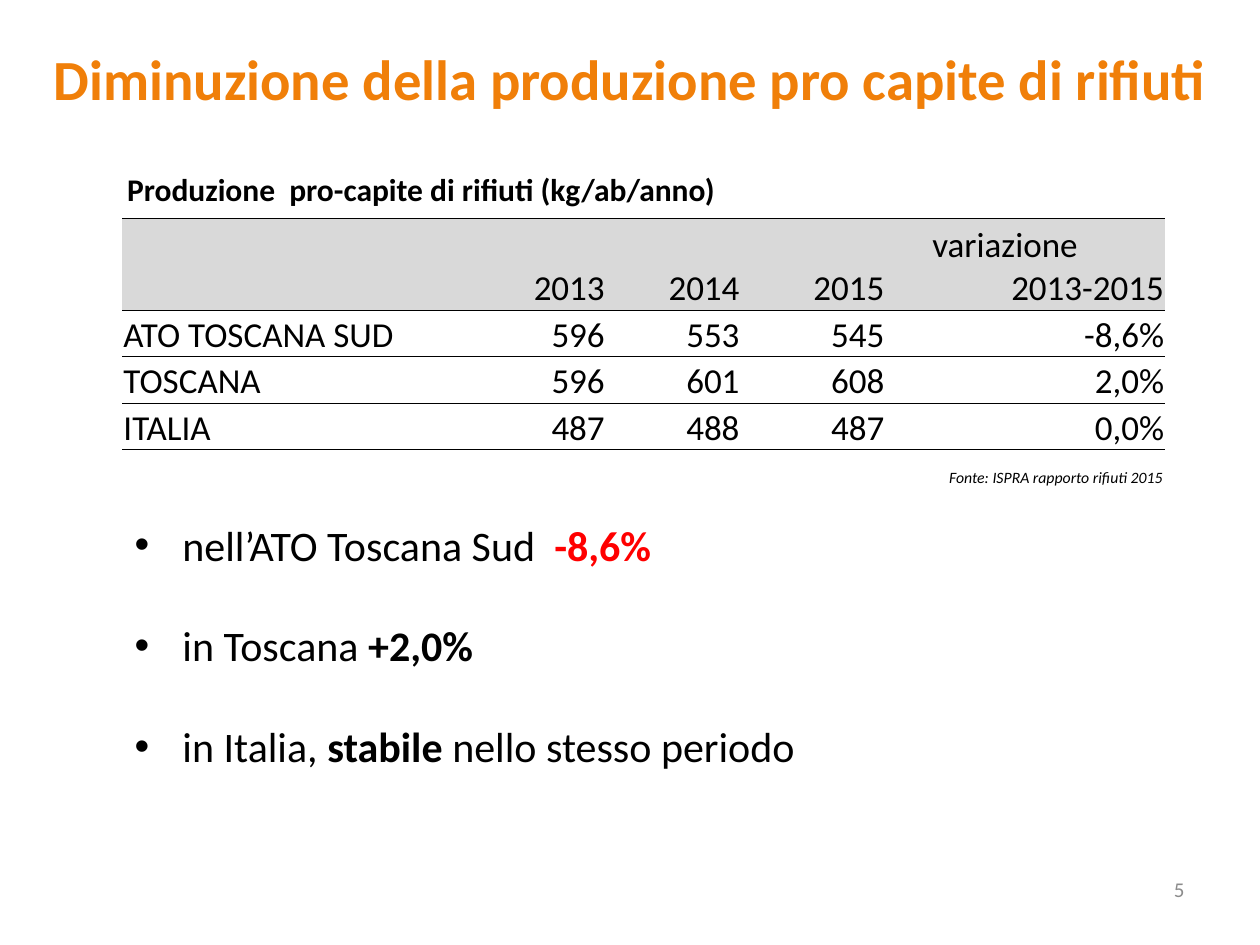
from lxml.etree import SubElement
from pptx import Presentation
from pptx.dml.color import RGBColor
from pptx.enum.text import MSO_ANCHOR, PP_ALIGN
from pptx.oxml.ns import qn
from pptx.util import Inches, Pt

BLACK = RGBColor(0, 0, 0)
ORANGE = RGBColor(0xF0, 0x7F, 0x09)
GREY = RGBColor(0x8C, 0x8C, 0x8C)
PALE = RGBColor(0xD9, 0xD9, 0xD9)
RED = RGBColor(0xFF, 0, 0)

COLS = [2.28, 1.56, 1.07, 1.15, 2.22]
ROWS = [0.73, 0.37, 0.37, 0.37]
DATA = [
    ["", "2013", "2014", "2015", "variazione\n2013-2015"],
    ["ATO TOSCANA SUD", "596", "553", "545", "-8,6%"],
    ["TOSCANA", "596", "601", "608", "2,0%"],
    ["ITALIA", "487", "488", "487", "0,0%"],
]
POINTS = [
    [("nell’ATO Toscana Sud  ", {}), ("-8,6%", {"bold": True, "color": RED})],
    [("in Toscana ", {}), ("+2,0%", {"bold": True})],
    [("in Italia, ", {}), ("stabile", {"bold": True}),
     (" nello stesso periodo", {})],
]


class Deck:
    """Holds the text style and the current slide."""

    base = {"name": "Calibri", "bold": False, "italic": False}

    def __init__(self, prs):
        self.slide = prs.slides.add_slide(prs.slide_layouts[6])

    def style(self, font, size, color=BLACK, **form):
        for key, val in {**self.base, "size": Pt(size), **form}.items():
            setattr(font, key, val)
        font.color.rgb = color

    def frame(self, box, wrap=True, anchor=MSO_ANCHOR.TOP):
        frame = self.slide.shapes.add_textbox(*map(Inches, box)).text_frame
        frame.word_wrap = wrap
        frame.vertical_anchor = anchor
        return frame

    def text(self, box, words, size, align=PP_ALIGN.LEFT, wrap=True,
             anchor=MSO_ANCHOR.TOP, **form):
        para = self.frame(box, wrap, anchor).paragraphs[0]
        para.alignment = align
        run = para.add_run()
        run.text = words
        self.style(run.font, size, **form)

    def bullets(self, box, points, size, gap):
        frame = self.frame(box)
        for i, parts in enumerate(points):
            para = frame.add_paragraph() if i else frame.paragraphs[0]
            props = para._p.get_or_add_pPr()
            props.set("marL", str(Inches(0.38)))
            props.set("indent", str(-Inches(0.38)))
            SubElement(props, qn("a:buFont"), typeface="Arial")
            SubElement(props, qn("a:buChar"), char="•")
            para.alignment = PP_ALIGN.JUSTIFY
            if i:
                para.space_before = Pt(gap)
            for words, form in parts:
                run = para.add_run()
                run.text = words
                self.style(run.font, size, **form)

    def rules(self, cell):
        """Draw thin lines above and below a cell, none at its sides."""
        props = cell._tc.get_or_add_tcPr()
        for side in "LRTB":
            line = SubElement(props, qn(f"a:ln{side}"), w=str(Pt(0.5)))
            if side in "LR":
                SubElement(line, qn("a:noFill"))
            else:
                fill = SubElement(line, qn("a:solidFill"))
                SubElement(fill, qn("a:srgbClr"), val=str(BLACK))

    def cell(self, cell, words, size, align, head):
        self.rules(cell)
        if head:
            cell.fill.solid()
            cell.fill.fore_color.rgb = PALE
        else:
            cell.fill.background()
        cell.vertical_anchor = MSO_ANCHOR.BOTTOM
        for side in ("left", "right", "top"):
            setattr(cell, f"margin_{side}", Inches(0.01))
        cell.margin_bottom = 0
        cell.text = words
        for para in cell.text_frame.paragraphs:
            para.alignment = align
            self.style(para.font, size)
            for run in para.runs:
                self.style(run.font, size)

    def table(self, left, top, data, size):
        box = map(Inches, (left, top, sum(COLS), sum(ROWS)))
        grid = self.slide.shapes.add_table(len(ROWS), len(COLS), *box).table
        grid.first_row = grid.horz_banding = False
        for col, width in zip(grid.columns, COLS):
            col.width = Inches(width)
        for r, (row, high) in enumerate(zip(data, ROWS)):
            grid.rows[r].height = Inches(high)
            for c, words in enumerate(row):
                align = PP_ALIGN.RIGHT if c else PP_ALIGN.LEFT
                self.cell(grid.cell(r, c), words, size, align, r == 0)
        return grid


def main():
    prs = Presentation()
    prs.slide_width, prs.slide_height = Inches(10), Inches(7.5)
    deck = Deck(prs)
    deck.text((0, -0.01, 10, 1.25),
              "Diminuzione della produzione pro capite di rifiuti", 32.4,
              PP_ALIGN.CENTER, anchor=MSO_ANCHOR.MIDDLE, color=ORANGE,
              bold=True)
    deck.text((7.17, 6.9, 2.33, 0.31), "5", 12, PP_ALIGN.RIGHT,
              anchor=MSO_ANCHOR.MIDDLE, color=GREY)
    deck.text((6.8, 3.66, 3.16, 0.25), "Fonte: ISPRA rapporto rifiuti 2015",
              9, PP_ALIGN.CENTER, italic=True)
    deck.text((0.91, 1.3, 4.99, 0.4),
              "Produzione  pro-capite di rifiuti (kg/ab/anno)", 18,
              wrap=False, bold=True)
    grid = deck.table(0.97, 1.73, DATA, 20)
    change = grid.cell(0, 4).text_frame.paragraphs[0]
    change.alignment = PP_ALIGN.LEFT
    change._p.get_or_add_pPr().set("marL", str(Inches(0.36)))
    deck.bullets((0.97, 4.07, 7.76, 2.12), POINTS, 24, 28.8)
    prs.save("out.pptx")


if __name__ == "__main__":
    main()
